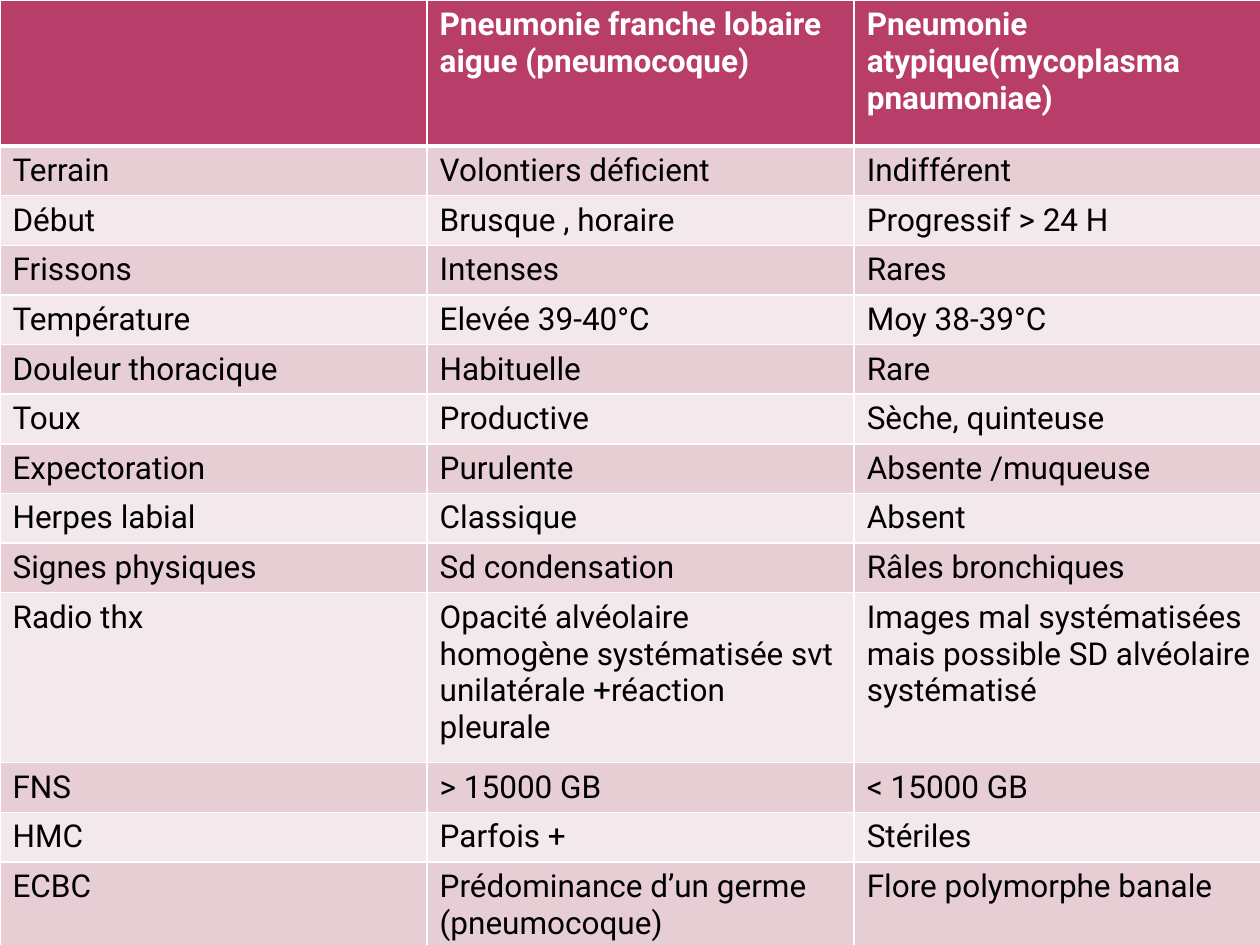
from lxml import etree
from pptx import Presentation
from pptx.dml.color import RGBColor
from pptx.oxml import ns
from pptx.util import Inches, Pt

WHITE = RGBColor(0xFF, 0xFF, 0xFF)
BLACK = RGBColor(0x00, 0x00, 0x00)
HEADER = RGBColor(0xB8, 0x3D, 0x68)
BANDS = (RGBColor(0xF3, 0xE8, 0xEB), RGBColor(0xE6, 0xCE, 0xD4))

COLUMN_WIDTH = 3.39
LINE_HEIGHT = 0.37
TALL_ROWS = {0: 1.16, 10: 1.35, 13: 0.66}

ROWS = [
    ("", "Pneumonie franche lobaire aigue (pneumocoque)",
     "Pneumonie atypique(mycoplasma pnaumoniae)"),
    ("Terrain", "Volontiers déficient", "Indifférent"),
    ("Début", "Brusque , horaire", "Progressif > 24 H"),
    ("Frissons", "Intenses", "Rares"),
    ("Température", "Elevée 39-40°C", "Moy 38-39°C"),
    ("Douleur thoracique", "Habituelle", "Rare"),
    ("Toux", "Productive", "Sèche, quinteuse"),
    ("Expectoration", "Purulente", "Absente /muqueuse"),
    ("Herpes labial", "Classique", "Absent"),
    ("Signes physiques", "Sd condensation", "Râles bronchiques"),
    ("Radio thx",
     "Opacité alvéolaire homogène systématisée svt unilatérale +réaction pleurale",
     "Images mal systématisées mais possible SD alvéolaire systématisé"),
    ("FNS", "> 15000 GB", "< 15000 GB"),
    ("HMC", "Parfois +", "Stériles"),
    ("ECBC", "Prédominance d’un germe (pneumocoque)", "Flore polymorphe banale"),
]


def add_borders(cell, top, bottom):
    properties = cell._tc.get_or_add_tcPr()
    for side, width in (("L", 1), ("R", 1), ("T", top), ("B", bottom)):
        line = etree.SubElement(properties, ns.qn(f"a:ln{side}"), w=str(Pt(width)))
        fill = etree.SubElement(line, ns.qn("a:solidFill"))
        etree.SubElement(fill, ns.qn("a:srgbClr"), val=str(WHITE))


def fill_cell(cell, words, row_index):
    is_header = row_index == 0
    add_borders(cell, 3 if row_index == 1 else 1, 3 if is_header else 1)
    cell.fill.solid()
    cell.fill.fore_color.rgb = HEADER if is_header else BANDS[row_index % 2]
    cell.text = words
    font = cell.text_frame.paragraphs[0].font
    font.name = "Roboto"
    font.size = Pt(18)
    font.bold = is_header
    font.color.rgb = WHITE if is_header else BLACK


def add_comparison_table(slide):
    heights = [TALL_ROWS.get(index, LINE_HEIGHT) for index in range(len(ROWS))]
    column_count = len(ROWS[0])
    table = slide.shapes.add_table(
        len(ROWS), column_count, 0, 0,
        Inches(COLUMN_WIDTH * column_count), Inches(sum(heights))).table
    for column in table.columns:
        column.width = Inches(COLUMN_WIDTH)
    for row_index, (words, height) in enumerate(zip(ROWS, heights)):
        table.rows[row_index].height = Inches(height)
        for column_index, entry in enumerate(words):
            fill_cell(table.cell(row_index, column_index), entry, row_index)


def main():
    deck = Presentation()
    deck.slide_width = Inches(10)
    deck.slide_height = Inches(7.5)
    slide = deck.slides.add_slide(deck.slide_layouts[6])
    add_comparison_table(slide)
    deck.save("out.pptx")


if __name__ == "__main__":
    main()
